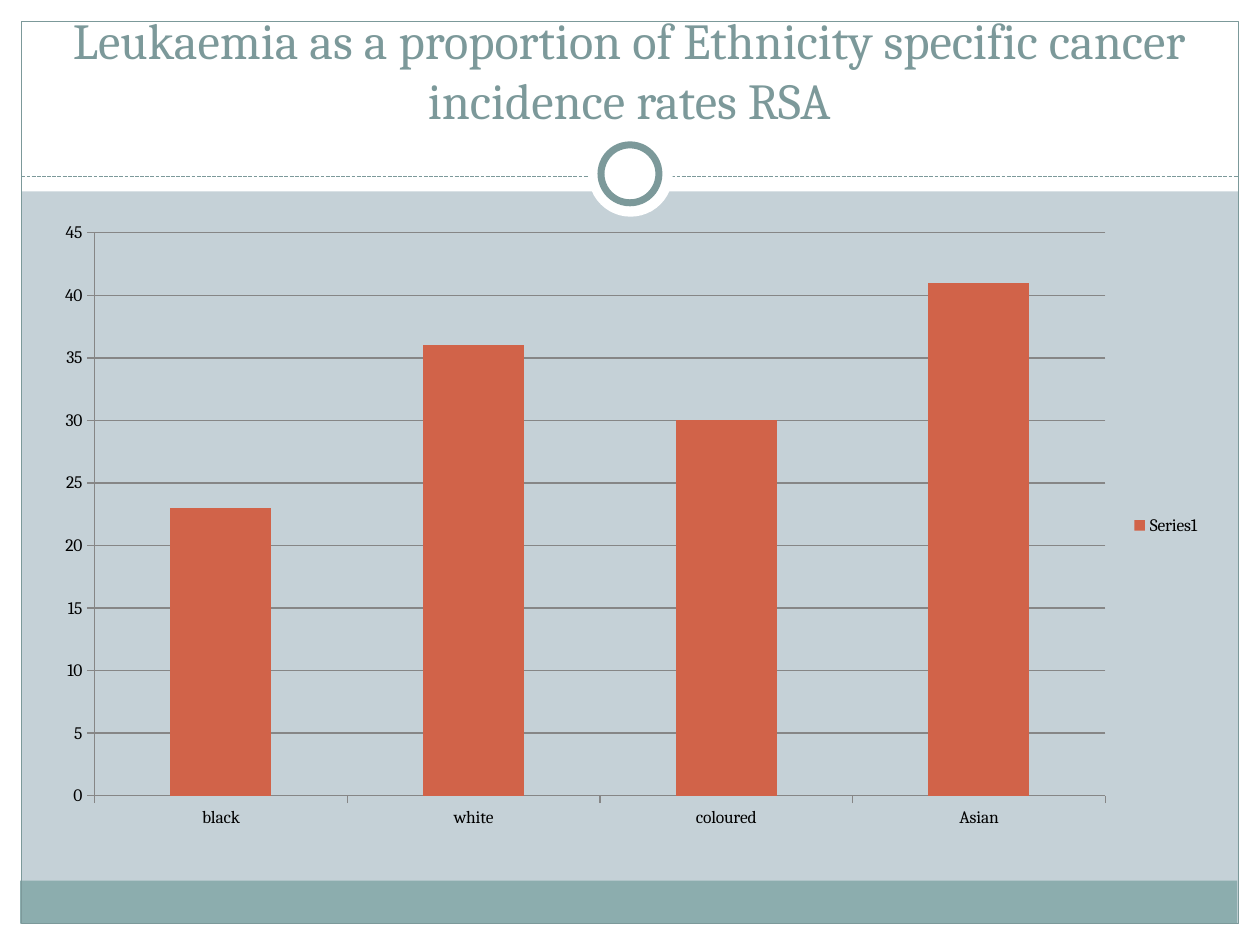
from dataclasses import dataclass
from typing import Optional

from pptx import Presentation
from pptx.chart.data import CategoryChartData
from pptx.dml.color import RGBColor
from pptx.enum import chart as ch, dml, shapes, text
from pptx.oxml.ns import qn
from pptx.util import Inches, Pt


@dataclass(frozen=True)
class Theme:
    back: str = "C5D1D7"
    white: str = "FFFFFF"
    foot: str = "8CADAE"
    edge: str = "7C999A"
    bar: str = "D16349"
    grid: str = "868686"
    ink: str = "000000"
    face: str = "Cambria"
    head: float = 28.8
    label: float = 10
    thin: float = 0.75
    ring: float = 4


@dataclass(frozen=True)
class Part:
    left: float
    top: float
    width: float
    height: float
    fill: Optional[str] = None
    line: Optional[str] = None
    weight: float = 0.75
    kind: shapes.MSO_SHAPE = shapes.MSO_SHAPE.RECTANGLE

    def box(self) -> list:
        return [Inches(n) for n in (self.left, self.top, self.width, self.height)]


T = Theme()
WIDE, HIGH, RIM = 10, 7.5, 0.17
RULE = 1.4
OVAL = shapes.MSO_SHAPE.OVAL

PANELS = [
    Part(0, HIGH - RIM, WIDE, RIM, T.white),
    Part(0, 0, WIDE, 1.52, T.white),
    Part(0, 0, RIM, HIGH, T.white),
    Part(WIDE - RIM, 0, RIM, HIGH, T.white),
    Part(0.16, 6.99, 9.66, 0.34, T.foot),
    Part(RIM, RIM, WIDE - 2 * RIM, HIGH - 2 * RIM, line=T.edge),
]
RINGS = [
    Part(4.67, 1.05, 0.67, 0.67, T.white, kind=OVAL),
    Part(4.77, 1.15, 0.46, 0.46, T.white, T.edge, T.ring, OVAL),
]
TITLE = Part(0.33, 0.25, 9.33, 0.83)
CHART = Part(0.33, 1.67, 9.3, 5)
RATES = {"black": 23, "white": 36, "coloured": 30, "Asian": 41}


def rgb(code: str) -> RGBColor:
    return RGBColor.from_string(code)


def apply(item, form: dict) -> None:
    for name, value in form.items():
        setattr(item, name, value)


def stroke(line, color: str, weight: float) -> None:
    line.color.rgb = rgb(color)
    line.width = Pt(weight)


def style(font, size: float, color: str) -> None:
    apply(font, {"name": T.face, "size": Pt(size), "bold": False})
    font.color.rgb = rgb(color)


def draw(slide, part: Part) -> None:
    shape = slide.shapes.add_shape(part.kind, *part.box())
    shape.shadow.inherit = False
    if part.fill:
        shape.fill.solid()
        shape.fill.fore_color.rgb = rgb(part.fill)
    else:
        shape.fill.background()
    if part.line:
        stroke(shape.line, part.line, part.weight)
    else:
        shape.line.fill.background()


def divide(slide) -> None:
    rule = slide.shapes.add_connector(
        shapes.MSO_CONNECTOR.STRAIGHT,
        Inches(RIM), Inches(RULE), Inches(WIDE - RIM), Inches(RULE))
    stroke(rule.line, T.edge, T.thin)
    rule.line.dash_style = dml.MSO_LINE.SQUARE_DOT
    props = rule._element.spPr
    props.append(props.makeelement(qn("a:effectLst"), {}))


def head(slide, words: str) -> None:
    """Fill the title placeholder and bring it in front of the panels."""
    title = slide.shapes.title
    apply(title, dict(zip(("left", "top", "width", "height"), TITLE.box())))
    frame = title.text_frame
    frame.text = words
    apply(frame, {"vertical_anchor": text.MSO_ANCHOR.BOTTOM,
                  "auto_size": text.MSO_AUTO_SIZE.NONE, "word_wrap": True})
    line = frame.paragraphs[0]
    line.alignment = text.PP_ALIGN.CENTER
    style(line.runs[0].font, T.head, T.edge)
    slide.shapes._spTree.append(title._element)


def plot(slide) -> None:
    data = CategoryChartData()
    data.categories = list(RATES)
    data.add_series("Series1", list(RATES.values()))
    chart = slide.shapes.add_chart(
        ch.XL_CHART_TYPE.COLUMN_CLUSTERED, *CHART.box(), data).chart
    apply(chart, {"has_title": False, "has_legend": True})
    style(chart.font, T.label, T.ink)
    apply(chart.legend, {"position": ch.XL_LEGEND_POSITION.RIGHT,
                         "include_in_layout": False})
    bars = chart.plots[0]
    apply(bars, {"gap_width": 150, "vary_by_categories": False})
    fill = bars.series[0].format.fill
    fill.solid()
    fill.fore_color.rgb = rgb(T.bar)
    for axis in (chart.category_axis, chart.value_axis):
        axis.major_tick_mark = ch.XL_TICK_MARK.OUTSIDE
        stroke(axis.format.line, T.grid, T.thin)
    apply(chart.value_axis, {"minimum_scale": 0, "maximum_scale": 45,
                             "major_unit": 5, "has_major_gridlines": True})
    stroke(chart.value_axis.major_gridlines.format.line, T.grid, T.thin)


def main() -> None:
    deck = Presentation()
    apply(deck, {"slide_width": Inches(WIDE), "slide_height": Inches(HIGH)})
    slide = deck.slides.add_slide(deck.slide_layouts.get_by_name("Title Only"))
    back = slide.background.fill
    back.solid()
    back.fore_color.rgb = rgb(T.back)
    for part in PANELS:
        draw(slide, part)
    divide(slide)
    for part in RINGS:
        draw(slide, part)
    head(slide, "Leukaemia as a proportion of Ethnicity specific cancer "
                "incidence rates RSA")
    plot(slide)
    deck.save("out.pptx")


if __name__ == "__main__":
    main()
